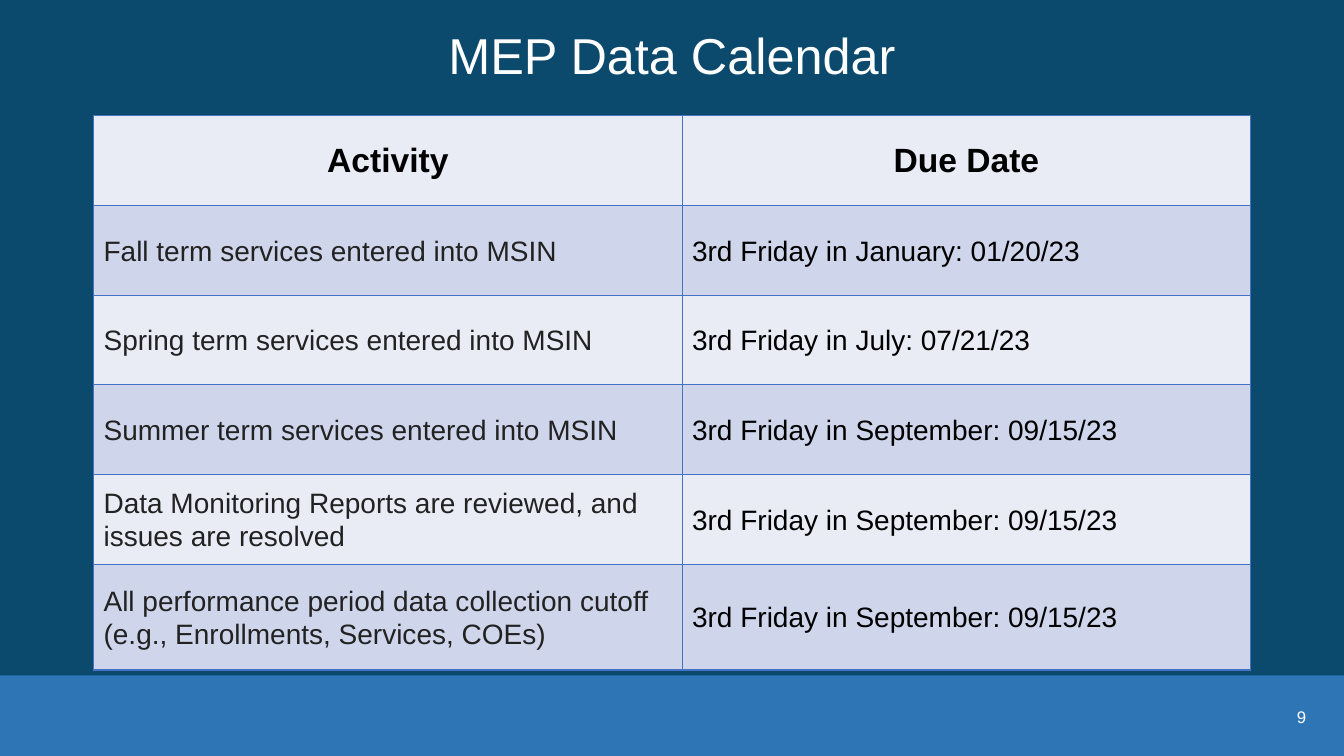
from lxml import etree
from pptx import Presentation
from pptx import util as u
from pptx.dml.color import RGBColor
from pptx.enum import shapes, text
from pptx.oxml import ns

ACTIVITIES = [
    ("Fall term services entered into MSIN", "3rd Friday in January: 01/20/23"),
    ("Spring term services entered into MSIN", "3rd Friday in July: 07/21/23"),
    ("Summer term services entered into MSIN", "3rd Friday in September: 09/15/23"),
    ("Data Monitoring Reports are reviewed, and issues are resolved",
     "3rd Friday in September: 09/15/23"),
    ("All performance period data collection cutoff\n(e.g., Enrollments, Services, COEs)",
     "3rd Friday in September: 09/15/23"),
]


def paint(fill, color):
    fill.solid()
    fill.fore_color.rgb = RGBColor.from_string(color)


def write(frame, content, size=20, color="000000", bold=False,
          align=text.PP_ALIGN.LEFT, spacing=1.0, font="Arial"):
    for index, line in enumerate(content.split("\n")):
        paragraph = frame.add_paragraph() if index else frame.paragraphs[0]
        paragraph.alignment = align
        paragraph.line_spacing = spacing
        paragraph.space_before = u.Pt(0)
        run = paragraph.add_run()
        run.text = line
        run.font.name = font
        run.font.size = u.Pt(size)
        run.font.bold = bold
        paint(run.font.fill, color)


class CalendarSlide:
    background = "0C4A6D"
    band = "2E75B6"
    border = "4472C4"
    light = "FFFFFF"
    row_fills = ("E9EBF5", "CFD5EA")
    activity_color = "222222"

    def __init__(self, presentation):
        self.slide = presentation.slides.add_slide(presentation.slide_layouts[5])
        paint(self.slide.background.fill, self.background)

    def add_band(self, left, top, width, height):
        shape = self.slide.shapes.add_shape(
            shapes.MSO_SHAPE.RECTANGLE, left, top, width, height)
        shape.shadow.inherit = False
        shape.line.fill.background()
        paint(shape.fill, self.band)

    def add_title(self, content, left, top, width, height):
        title = self.slide.shapes.title
        title.left, title.top, title.width, title.height = left, top, width, height
        title.text_frame.vertical_anchor = text.MSO_ANCHOR.MIDDLE
        write(title.text_frame, content, size=36, color=self.light,
              align=text.PP_ALIGN.CENTER, spacing=0.9)

    def add_number(self, content, left, top, width, height):
        frame = self.slide.shapes.add_textbox(left, top, width, height).text_frame
        frame.word_wrap = True
        frame.vertical_anchor = text.MSO_ANCHOR.MIDDLE
        write(frame, content, size=12, color=self.light, align=text.PP_ALIGN.RIGHT)

    def add_cell_borders(self, cell):
        properties = cell._tc.get_or_add_tcPr()
        for side in ("lnL", "lnR", "lnT", "lnB"):
            line = etree.SubElement(properties, ns.qn(f"a:{side}"), w=str(u.Pt(1)))
            fill = etree.SubElement(line, ns.qn("a:solidFill"))
            etree.SubElement(fill, ns.qn("a:srgbClr"), val=self.border)

    def add_table(self, headings, rows, left, top, widths, heights):
        table = self.slide.shapes.add_table(
            len(heights), len(widths), left, top, sum(widths), sum(heights)).table
        for column, width in zip(table.columns, widths):
            column.width = width
        for row, height in zip(table.rows, heights):
            row.height = height
        for row_index, values in enumerate([headings, *rows]):
            for column_index, value in enumerate(values):
                cell = table.cell(row_index, column_index)
                self.add_cell_borders(cell)
                paint(cell.fill, self.row_fills[row_index % 2])
                cell.vertical_anchor = text.MSO_ANCHOR.MIDDLE
                if row_index == 0:
                    write(cell.text_frame, value, size=24, bold=True,
                          align=text.PP_ALIGN.CENTER)
                    continue
                cell.margin_left = u.Cm(0.25)
                cell.margin_right = cell.margin_top = cell.margin_bottom = 0
                color = "000000" if column_index else self.activity_color
                write(cell.text_frame, value, color=color, spacing=1.07)


def main():
    presentation = Presentation()
    presentation.slide_width = u.Cm(33.87)
    presentation.slide_height = u.Cm(19.05)
    calendar = CalendarSlide(presentation)
    calendar.add_band(0, u.Cm(17.02), presentation.slide_width, u.Cm(2.03))
    calendar.add_number("9", u.Cm(31.98), u.Cm(17.7), u.Cm(1.19), u.Cm(0.74))
    calendar.add_title("MEP Data Calendar", 0, 0, presentation.slide_width, u.Cm(2.92))
    calendar.add_table(
        ("Activity", "Due Date"), ACTIVITIES, u.Cm(2.36), u.Cm(2.92),
        widths=[u.Cm(14.83), u.Cm(14.33)],
        heights=[u.Cm(2.26)] * 5 + [u.Cm(2.67)])
    presentation.save("out.pptx")


if __name__ == "__main__":
    main()
